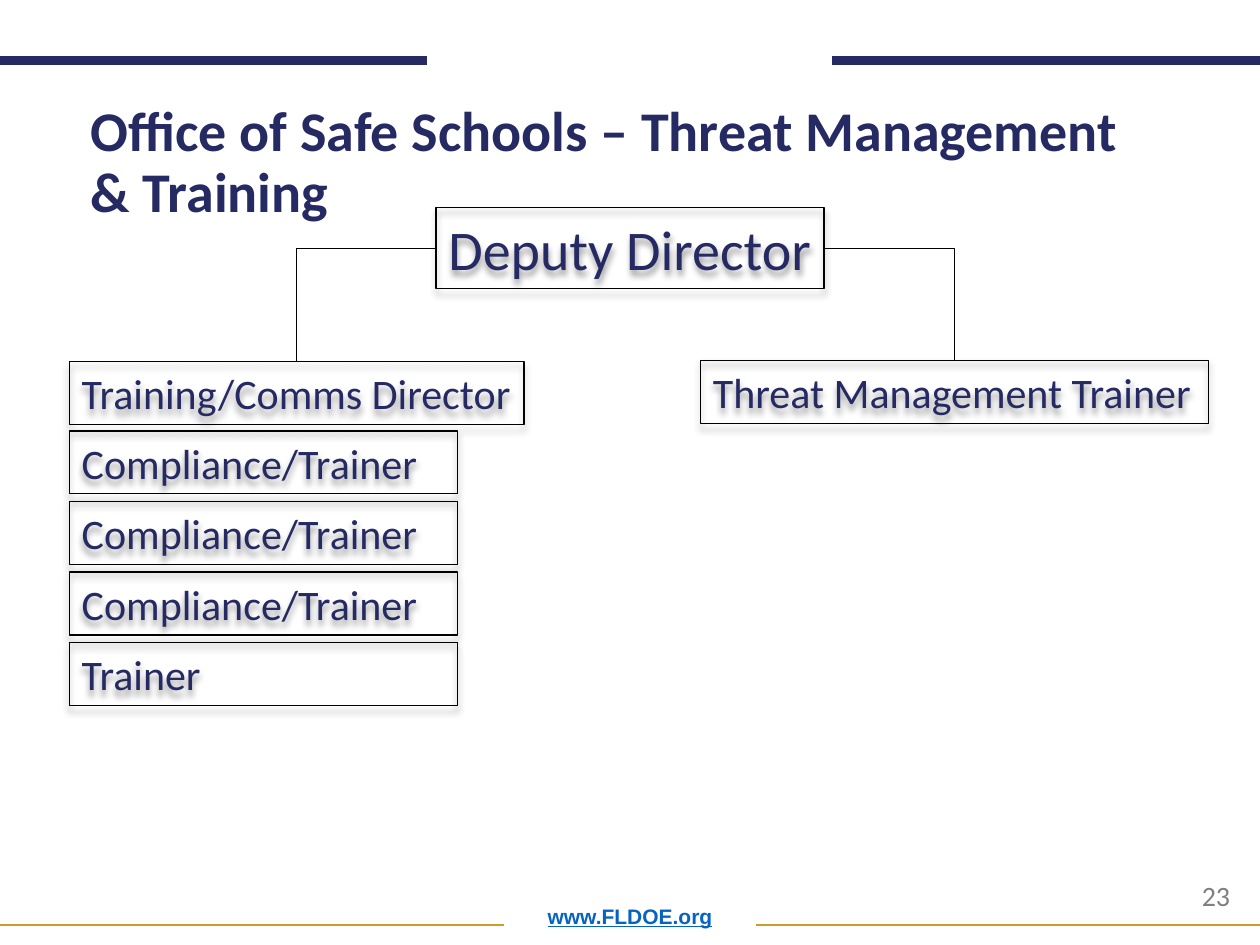
from dataclasses import dataclass

from lxml import etree
from pptx import Presentation
from pptx import util as u
from pptx.dml.color import RGBColor
from pptx.enum import shapes, text
from pptx.oxml import ns


@dataclass(frozen=True)
class Theme:
    navy: str = "262A63"
    gold: str = "CD9D2C"
    black: str = "000000"
    gray: str = "7F7F7F"
    blue: str = "0563C1"
    font: str = "Calibri"
    web: str = "Arial"
    large: int = 32
    role: int = 24
    page: int = 16
    small: int = 12


LOOK = Theme()


def paint(line, color, width):
    line.color.rgb = RGBColor.from_string(color)
    line.width = u.Pt(width)


def write(frame, words, size, color, font=LOOK.font, bold=False):
    """Fill a text frame with one formatted paragraph and return it."""
    frame.word_wrap = True
    para = frame.paragraphs[0]
    para.text = words
    para.alignment = text.PP_ALIGN.LEFT
    face = para.runs[0].font
    face.name, face.size, face.bold = font, u.Pt(size), bold
    face.color.rgb = RGBColor.from_string(color)
    return para


def add_label(slide, area, words, size, color, **style):
    label = slide.shapes.add_textbox(*map(u.Inches, area))
    return label.text_frame, write(label.text_frame, words, size, color, **style)


def add_title(slide, words):
    title = slide.shapes.title
    title.left, title.top, title.width, title.height = map(
        u.Inches, (0.62, 1.26, 8.76, 0.57))
    frame = title.text_frame
    frame.auto_size = text.MSO_AUTO_SIZE.NONE
    frame.vertical_anchor = text.MSO_ANCHOR.BOTTOM
    write(frame, words, LOOK.large, LOOK.navy, bold=True).line_spacing = 0.9


def cast_shadow(box):
    """Give a box a soft shadow that falls straight down."""
    box.shadow.inherit = False
    effects = box._element.spPr.find(ns.qn("a:effectLst"))
    shade = etree.SubElement(
        effects, ns.qn("a:outerShdw"), blurRad=str(u.Pt(4)),
        dist=str(u.Pt(3)), dir="5400000", rotWithShape="0")
    color = etree.SubElement(shade, ns.qn("a:srgbClr"), val=LOOK.black)
    etree.SubElement(color, ns.qn("a:alpha"), val="40000")


def add_box(slide, left, top, width, words, height=0.5, size=LOOK.role):
    box = slide.shapes.add_shape(
        shapes.MSO_SHAPE.RECTANGLE, *map(u.Inches, (left, top, width, height)))
    box.fill.background()
    paint(box.line, LOOK.black, 0.75)
    cast_shadow(box)
    frame = box.text_frame
    frame.vertical_anchor = text.MSO_ANCHOR.TOP
    write(frame, words, size, LOOK.navy)
    frame.auto_size = text.MSO_AUTO_SIZE.SHAPE_TO_FIT_TEXT
    return box


def add_line(slide, kind, ends, color, width):
    line = slide.shapes.add_connector(kind, *map(u.Inches, ends))
    paint(line.line, color, width)
    etree.SubElement(line._element.spPr, ns.qn("a:effectLst"))
    return line


def add_rule(slide, start, end, top, color, width):
    add_line(slide, shapes.MSO_CONNECTOR.STRAIGHT,
             (start, top, end, top), color, width)


def add_branch(slide, boss, side, report):
    """Join a side of the boss to the top of a report with one bend."""
    link = add_line(slide, shapes.MSO_CONNECTOR.ELBOW,
                    (0, 0, 1, 1), LOOK.black, 0.5)
    link.begin_connect(boss, side)
    link.end_connect(report, 0)
    link._element.spPr.find(ns.qn("a:prstGeom")).set("prst", "bentConnector2")


def add_frame(slide):
    """Draw the rules, web address and page number around the content."""
    frame, para = add_label(slide, (0.69, 7, 8.62, 0.42), "www.FLDOE.org",
                            LOOK.small, LOOK.blue, font=LOOK.web, bold=True)
    frame.vertical_anchor = text.MSO_ANCHOR.BOTTOM
    para.alignment = text.PP_ALIGN.CENTER
    para.line_spacing = 0.9
    para.runs[0].font.underline = True
    for start, end in ((0, 3.39), (6.6, 10)):
        add_rule(slide, start, end, 0.48, LOOK.navy, 5)
    for start, end in ((0, 4), (6, 10)):
        add_rule(slide, start, end, 7.34, LOOK.gold, 1)
    add_label(slide, (9.44, 6.92, 0.52, 0.37), "23", LOOK.page, LOOK.gray)


def add_chart(slide):
    """Draw the organization chart."""
    deputy = add_box(slide, 3.46, 1.65, 3.08, "Deputy Director",
                     height=0.64, size=LOOK.large)
    threat = add_box(slide, 5.56, 2.86, 4.03, "Threat Management Trainer")
    comms = add_box(slide, 0.55, 2.87, 3.61, "Training/Comms Director")
    staff = ["Compliance/Trainer"] * 3 + ["Trainer"]
    for row, role in enumerate(staff):
        add_box(slide, 0.55, 3.42 + 0.56 * row, 3.08, role)
    add_branch(slide, deputy, 1, comms)
    add_branch(slide, deputy, 3, threat)


def main():
    deck = Presentation()
    deck.slide_width, deck.slide_height = u.Inches(10), u.Inches(7.5)
    slide = deck.slides.add_slide(deck.slide_layouts[5])
    add_frame(slide)
    add_title(slide, "Office of Safe Schools – Threat Management & Training")
    add_chart(slide)
    deck.save("out.pptx")


if __name__ == "__main__":
    main()
